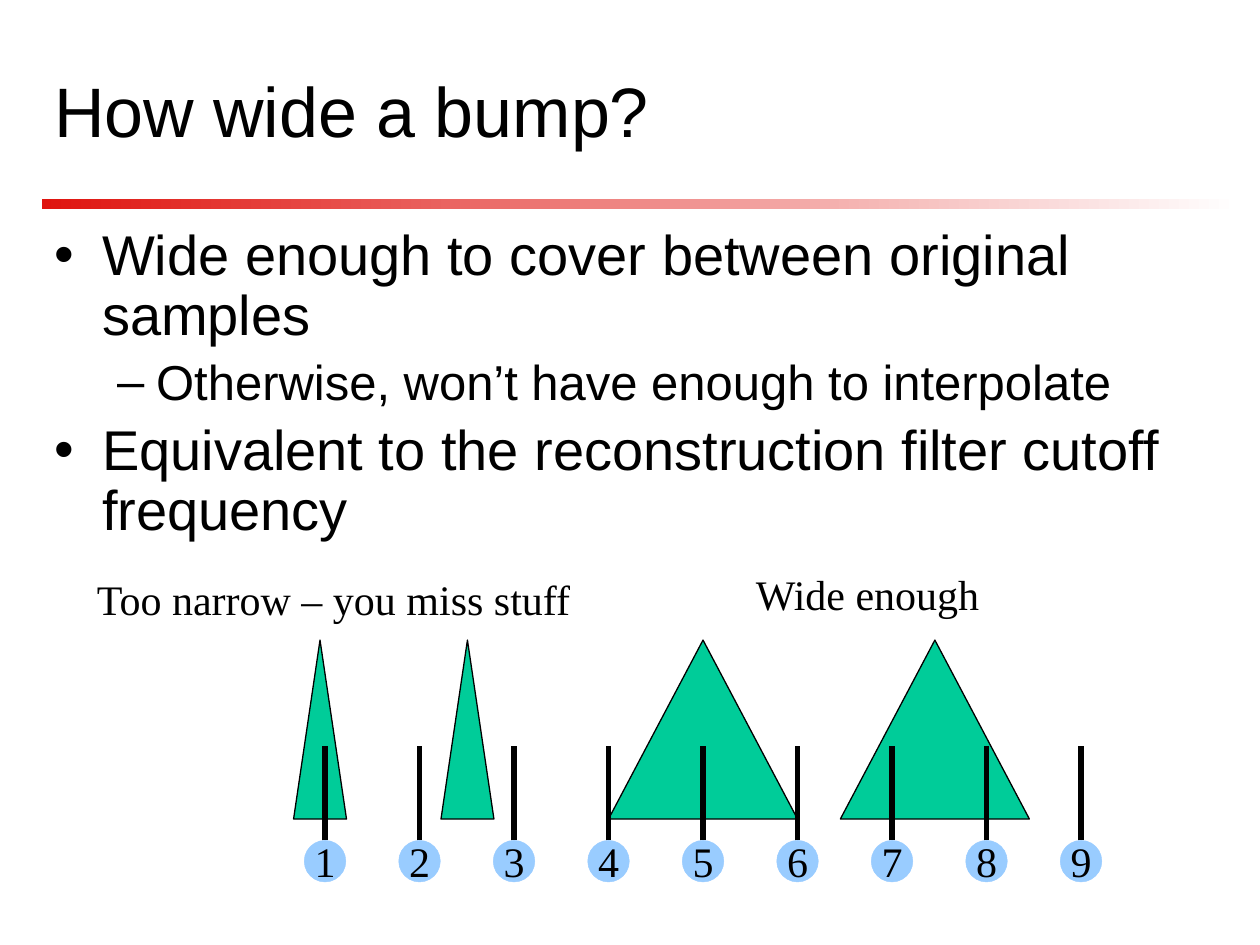
from dataclasses import dataclass

from lxml import etree
from pptx import Presentation
from pptx.dml import color
from pptx.enum import shapes, text
from pptx.oxml import ns
from pptx.util import Inches, Pt

COLORS = {
    "ink": "000000",
    "accent": "DF140F",
    "paper": "FFFFFF",
    "sample": "99CCFF",
    "bump": "00CC99",
}
HEADING_FONT = "Arial"
LABEL_FONT = "Times New Roman"


@dataclass
class Bullet:
    wording: str
    level: int = 0
    space_before: float = 0


@dataclass
class BulletStyle:
    mark: str
    size: int
    margin: float
    indent: float


@dataclass
class Bump:
    left: float
    width: float


@dataclass
class Label:
    wording: str
    left: float
    top: float
    width: float


BULLET_STYLES = [BulletStyle("•", 32, 0.38, -0.38), BulletStyle("–", 28, 0.81, -0.31)]
BULLETS = [
    Bullet("Wide enough to cover between original samples"),
    Bullet("Otherwise, won’t have enough to interpolate", 1, 5.6),
    Bullet("Equivalent to the reconstruction filter cutoff frequency", 0, 6.4),
]
BUMPS = [Bump(2.33, 0.42), Bump(3.5, 0.42), Bump(4.83, 1.5), Bump(6.67, 1.5)]
LABELS = [
    Label("Too narrow – you miss stuff", 0.67, 4.5, 3.99),
    Label("Wide enough", 5.9, 4.46, 1.99),
]
SAMPLE_COUNT = 9
FIRST_SAMPLE, SAMPLE_STEP = 2.58, 0.75
SAMPLE_TOP, SAMPLE_SIZE, STEM_TOP = 6.67, 0.33, 5.92


def rgb(name: str) -> color.RGBColor:
    return color.RGBColor.from_string(COLORS[name])


def box(left: float, top: float, width: float, height: float) -> list:
    return [Inches(value) for value in (left, top, width, height)]


def set_attributes(target, values: dict) -> None:
    for name, value in values.items():
        setattr(target, name, value)


def place(placeholder, left: float, top: float, width: float, height: float) -> None:
    names = ("left", "top", "width", "height")
    set_attributes(placeholder, dict(zip(names, box(left, top, width, height))))


def style_font(paragraph, name: str, size: float) -> None:
    set_attributes(paragraph.font, {"name": name, "size": Pt(size)})
    paragraph.font.color.rgb = rgb("ink")


def add_filled(parent, kind, bounds: list, fill: str, line: str, weight: float):
    shape = parent.add_shape(kind, *bounds)
    shape.shadow.inherit = False
    shape.fill.solid()
    shape.fill.fore_color.rgb = rgb(fill)
    shape.line.color.rgb = rgb(line)
    shape.line.width = Pt(weight)
    return shape


def add_rule(slide) -> None:
    rule = slide.shapes.add_shape(shapes.MSO_SHAPE.RECTANGLE, *box(0.33, 1.58, 9.5, 0.08))
    rule.shadow.inherit = False
    rule.line.fill.background()
    rule.fill.gradient()
    rule.fill.gradient_angle = 0
    for stop, position, name in zip(rule.fill.gradient_stops, (0, 1), ("accent", "paper")):
        stop.position = position
        stop.color.rgb = rgb(name)


def add_title(slide, wording: str) -> None:
    title = slide.shapes.title
    place(title, 0.33, 0.33, 8.33, 1.08)
    frame = title.text_frame
    frame.text = wording
    set_attributes(frame, {
        "vertical_anchor": text.MSO_ANCHOR.MIDDLE,
        "auto_size": text.MSO_AUTO_SIZE.NONE,
    })
    frame.paragraphs[0].alignment = text.PP_ALIGN.LEFT
    style_font(frame.paragraphs[0], HEADING_FONT, 40)


def add_bullets(slide, bullets: list[Bullet]) -> None:
    body = slide.placeholders[1]
    place(body, 0.33, 1.75, 9.42, 2)
    frame = body.text_frame
    frame.auto_size = text.MSO_AUTO_SIZE.NONE
    frame.text = "\n".join(bullet.wording for bullet in bullets)
    for paragraph, bullet in zip(frame.paragraphs, bullets):
        style = BULLET_STYLES[bullet.level]
        properties = paragraph._p.get_or_add_pPr()
        properties.set("marL", str(Inches(style.margin)))
        properties.set("indent", str(Inches(style.indent)))
        etree.SubElement(properties, ns.qn("a:buChar")).set("char", style.mark)
        set_attributes(paragraph, {
            "level": bullet.level,
            "line_spacing": 0.9,
            "space_before": Pt(bullet.space_before),
        })
        style_font(paragraph, HEADING_FONT, style.size)


def add_sample(group, number: int, center: float) -> None:
    bounds = box(center - SAMPLE_SIZE / 2, SAMPLE_TOP, SAMPLE_SIZE, SAMPLE_SIZE)
    circle = add_filled(group.shapes, shapes.MSO_SHAPE.OVAL, bounds, "sample", "sample", 0.25)
    frame = circle.text_frame
    frame.text = str(number)
    set_attributes(frame, {"word_wrap": False, "vertical_anchor": text.MSO_ANCHOR.MIDDLE})
    frame.paragraphs[0].alignment = text.PP_ALIGN.CENTER
    style_font(frame.paragraphs[0], LABEL_FONT, 24)


def add_stem(group, center: float) -> None:
    ends = box(center, SAMPLE_TOP, center, STEM_TOP)
    stem = group.shapes.add_connector(shapes.MSO_CONNECTOR.STRAIGHT, *ends)
    stem.line.color.rgb = rgb("ink")
    stem.line.width = Pt(3)
    etree.SubElement(stem._element.spPr, ns.qn("a:effectLst"))


def add_label(slide, label: Label) -> None:
    frame = slide.shapes.add_textbox(*box(label.left, label.top, label.width, 0.5)).text_frame
    frame.text = label.wording
    set_attributes(frame, {"word_wrap": False, "auto_size": text.MSO_AUTO_SIZE.SHAPE_TO_FIT_TEXT})
    style_font(frame.paragraphs[0], LABEL_FONT, 24)


def main() -> None:
    presentation = Presentation()
    presentation.slide_width, presentation.slide_height = Inches(10), Inches(7.5)
    slide = presentation.slides.add_slide(presentation.slide_layouts[1])

    # Heading and list
    add_rule(slide)
    add_title(slide, "How wide a bump?")
    add_bullets(slide, BULLETS)

    # Numbered samples, then bumps, then stems in front of the bumps
    centers = [FIRST_SAMPLE + SAMPLE_STEP * index for index in range(SAMPLE_COUNT)]
    samples = slide.shapes.add_group_shape()
    for number, center in enumerate(centers, start=1):
        add_sample(samples, number, center)
    for bump in BUMPS:
        bounds = box(bump.left, 5.08, bump.width, 1.42)
        add_filled(slide.shapes, shapes.MSO_SHAPE.ISOSCELES_TRIANGLE, bounds, "bump", "ink", 0.75)
    stems = slide.shapes.add_group_shape()
    for center in centers:
        add_stem(stems, center)

    # Labels above the bumps
    for label in LABELS:
        add_label(slide, label)

    presentation.save("out.pptx")


if __name__ == "__main__":
    main()
